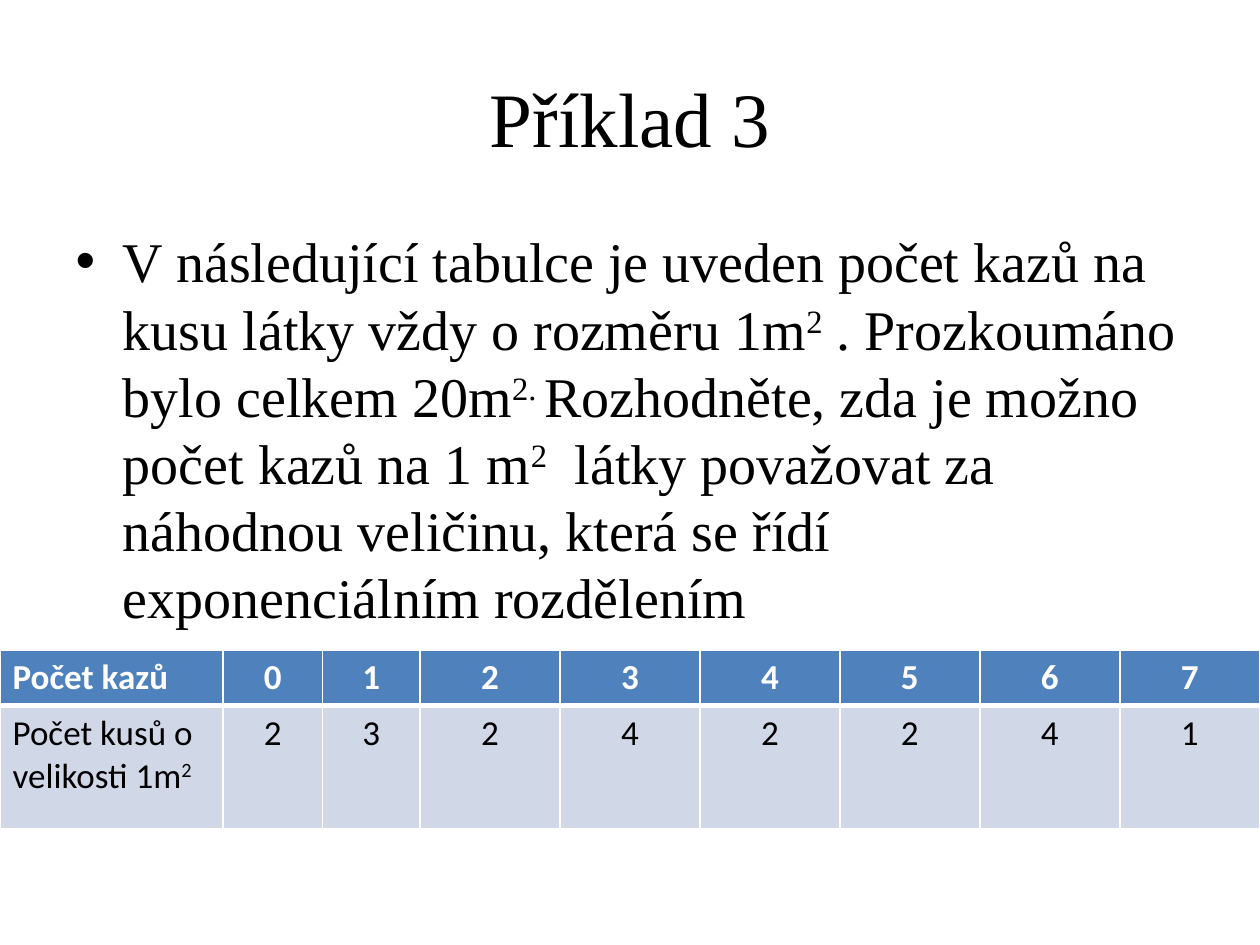
from lxml.etree import SubElement
from pptx import Presentation
from pptx.dml.color import RGBColor
from pptx.enum.text import MSO_ANCHOR, PP_ALIGN
from pptx.oxml.ns import qn
from pptx.util import Pt

COLORS = {"text": "000000", "white": "FFFFFF", "header": "4F81BD", "band": "D0D8E8"}
TITLE = "Příklad 3"
BODY = [
    ("V následující tabulce je uveden počet kazů na kusu látky vždy o rozměru 1m", False),
    ("2", True),
    (" . Prozkoumáno bylo celkem 20m", False),
    ("2. ", True),
    ("Rozhodněte, zda je možno počet kazů na 1 m", False),
    ("2", True),
    ("  látky považovat za náhodnou veličinu, která se řídí exponenciálním rozdělením", False),
]
HEADER = [[("Počet kazů", False)]] + [[(str(n), False)] for n in range(8)]
COUNTS = [[("Počet kusů o velikosti 1m", False), ("2", True)]] + [
    [(str(n), False)] for n in (2, 3, 2, 4, 2, 2, 4, 1)
]
ROWS = [
    {"cells": HEADER, "height": 31, "fill": "header", "color": "white", "bold": True, "bottom": 3},
    {"cells": COUNTS, "height": 70.5, "fill": "band", "color": "text", "bold": False, "bottom": 1},
]
WIDTHS = [127.5, 56.75, 55.75] + [80] * 6


def write(p, runs, font, size, color, align, bold=False):
    p.alignment = align
    p.font.name = font
    p.font.size = Pt(size)
    p.font.bold = bold
    p.font.color.rgb = RGBColor.from_string(COLORS[color])
    for text, raised in runs:
        r = p.add_run()
        r.text = text
        if raised:
            r._r.get_or_add_rPr().set("baseline", "30000")


def place(sp, left, top, width, height):
    sp.left, sp.top, sp.width, sp.height = Pt(left), Pt(top), Pt(width), Pt(height)


def set_borders(cell, widths):
    tcPr = cell._tc.get_or_add_tcPr()
    for side, width in widths.items():
        ln = SubElement(tcPr, qn(f"a:ln{side}"), w=str(Pt(width)))
        fill = SubElement(ln, qn("a:solidFill"))
        SubElement(fill, qn("a:srgbClr"), val=COLORS["white"])


prs = Presentation()
prs.slide_width, prs.slide_height = Pt(720), Pt(540)
s = prs.slides.add_slide(prs.slide_layouts[1])

title = s.shapes.title
place(title, 36, 21.6, 648, 90)
title.text_frame.vertical_anchor = MSO_ANCHOR.MIDDLE
write(title.text_frame.paragraphs[0], [(TITLE, False)],
      "Times New Roman", 44, "text", PP_ALIGN.CENTER)

body = s.placeholders[1]
place(body, 36, 126, 648, 356.4)
write(body.text_frame.paragraphs[0], BODY, "Times New Roman", 32, "text", PP_ALIGN.LEFT)

table = s.shapes.add_table(
    len(ROWS), len(WIDTHS), Pt(0), Pt(371.5), Pt(sum(WIDTHS)),
    Pt(sum(row["height"] for row in ROWS))).table
for column, width in zip(table.columns, WIDTHS):
    column.width = Pt(width)
for i, row in enumerate(ROWS):
    table.rows[i].height = Pt(row["height"])
    top = ROWS[i - 1]["bottom"] if i else 1
    for j, runs in enumerate(row["cells"]):
        cell = table.cell(i, j)
        set_borders(cell, {"L": 1, "R": 1, "T": top, "B": row["bottom"]})
        cell.fill.solid()
        cell.fill.fore_color.rgb = RGBColor.from_string(COLORS[row["fill"]])
        write(cell.text_frame.paragraphs[0], runs, "Calibri", 20, row["color"],
              PP_ALIGN.CENTER if j else PP_ALIGN.LEFT, row["bold"])

prs.save("out.pptx")
